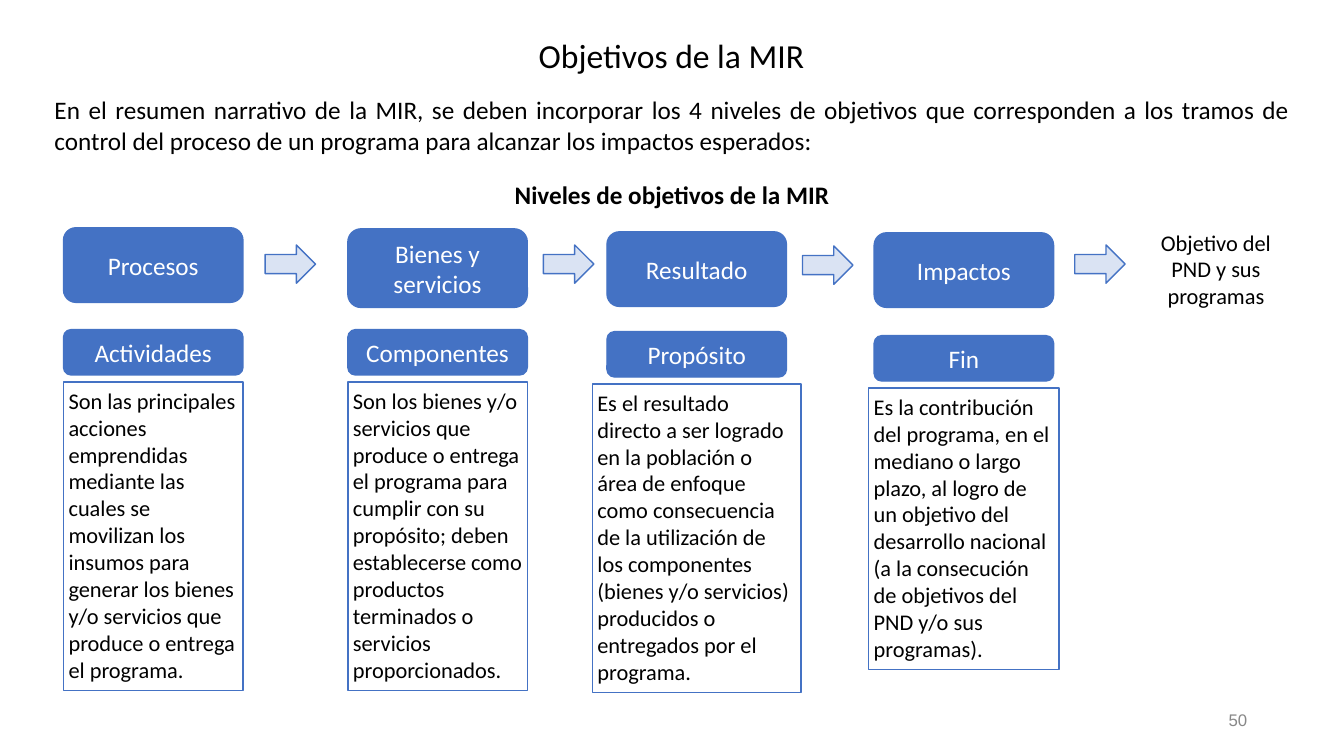
"""Build the slide on the four levels of objectives of the MIR."""
from dataclasses import dataclass

from pptx import Presentation
from pptx.dml.color import RGBColor
from pptx.enum import shapes, text
from pptx.util import Inches, Pt

BLUE = RGBColor(0x44, 0x72, 0xC4)
PALE_BLUE = RGBColor(0xDA, 0xE3, 0xF3)
GREY = RGBColor(0x88, 0x88, 0x88)
BLACK = RGBColor(0, 0, 0)
WHITE = RGBColor(255, 255, 255)
Align = text.PP_ALIGN
Anchor = text.MSO_ANCHOR
Preset = shapes.MSO_SHAPE

CARD_WIDTH = 1.78
LEVEL_HEIGHT = 0.45


@dataclass
class Level:
    """One level of objectives: its stage, name, description and geometry."""
    stage: str
    name: str
    description: str
    left: float
    stage_top: float
    stage_height: float
    name_top: float
    description_width: float
    description_height: float
    arrow_left: float
    arrow_top: float = 2.43


LEVELS = [
    Level("Procesos", "Actividades",
          "Son las principales acciones emprendidas mediante las cuales se "
          "movilizan los insumos para generar los bienes y/o servicios que "
          "produce o entrega el programa.",
          0.63, 2.26, 0.74, 3.27, 1.78, 3.06, 2.63),
    Level("Bienes y servicios", "Componentes",
          "Son los bienes y/o servicios que produce o entrega el programa para "
          "cumplir con su propósito; deben establecerse como productos "
          "terminados o servicios proporcionados.",
          3.45, 2.27, 0.78, 3.27, 1.78, 3.06, 5.39),
    Level("Resultado", "Propósito",
          "Es el resultado directo a ser logrado en la población o área de "
          "enfoque como consecuencia de la utilización de los componentes "
          "(bienes y/o servicios) producidos o entregados por el programa.",
          6.02, 2.3, 0.74, 3.29, 2.07, 3.06, 7.96, 2.44),
    Level("Impactos", "Fin",
          "Es la contribución del programa, en el mediano o largo plazo, al "
          "logro de un objetivo del desarrollo nacional (a la consecución de "
          "objetivos del PND y/o sus programas).",
          8.67, 2.31, 0.74, 3.33, 1.89, 2.79, 10.66),
]


def write(box, words, size, color=BLACK, align=Align.LEFT, anchor=Anchor.TOP,
          inset=0.05, wrap=True, bold=False, font="Calibri"):
    """Put one formatted paragraph in a box."""
    frame = box.text_frame
    frame.word_wrap = wrap
    frame.vertical_anchor = anchor
    frame.margin_left = frame.margin_right = Inches(inset)
    frame.margin_top = frame.margin_bottom = Inches(0.05)
    para = frame.paragraphs[0]
    para.text = words
    para.alignment = align
    para.font.name = font
    para.font.size = Pt(size)
    para.font.bold = bold
    para.font.color.rgb = color


def add_text(page, place, words, size, **style):
    """Add a plain text box."""
    box = page.shapes.add_textbox(*map(Inches, place))
    write(box, words, size, **style)


def add_figure(page, preset, place, fill=None):
    """Add a preset shape with a blue outline and an optional fill."""
    figure = page.shapes.add_shape(preset, *map(Inches, place))
    figure.shadow.inherit = False
    if fill is None:
        figure.fill.background()
    else:
        figure.fill.solid()
        figure.fill.fore_color.rgb = fill
    figure.line.color.rgb = BLUE
    figure.line.width = Pt(1)
    return figure


def add_card(page, place, words):
    """Add a rounded blue card with a centred label."""
    card = add_figure(page, Preset.ROUNDED_RECTANGLE, place, BLUE)
    write(card, words, 18, WHITE, Align.CENTER, Anchor.MIDDLE)


def add_level(page, level):
    """Add the cards, description and arrow of one level."""
    add_card(page, (level.left, level.stage_top, CARD_WIDTH, level.stage_height),
             level.stage)
    add_card(page, (level.left, level.name_top, CARD_WIDTH, LEVEL_HEIGHT),
             level.name)
    left = level.left - (level.description_width - CARD_WIDTH) / 2
    description = add_figure(
        page, Preset.RECTANGLE,
        (left, level.name_top + 0.52, level.description_width,
         level.description_height))
    write(description, level.description, 16)
    add_figure(page, Preset.RIGHT_ARROW,
               (level.arrow_left, level.arrow_top, 0.5, 0.38), PALE_BLUE)


def main():
    """Build and save the deck."""
    deck = Presentation()
    deck.slide_width, deck.slide_height = Inches(13.33), Inches(7.5)
    page = deck.slides.add_slide(deck.slide_layouts[6])
    add_text(page, (5.23, 0.3, 2.86, 0.5), "Objetivos de la MIR", 24,
             align=Align.CENTER, inset=0.1, wrap=False)
    add_text(page, (0.49, 0.89, 12.35, 0.71),
             "En el resumen narrativo de la MIR, se deben incorporar los 4 "
             "niveles de objetivos que corresponden a los tramos de control del "
             "proceso de un programa para alcanzar los impactos esperados:",
             18, align=Align.JUSTIFY)
    add_text(page, (4.99, 1.73, 3.35, 0.4), "Niveles de objetivos de la MIR", 18,
             align=Align.CENTER, inset=0.1, wrap=False, bold=True)
    for level in LEVELS:
        add_level(page, level)
    add_text(page, (11.34, 2.22, 1.44, 0.91), "Objetivo del PND y sus programas",
             16, align=Align.CENTER, inset=0.1)
    add_text(page, (12.13, 7, 0.29, 0.29), "50", 12, color=GREY,
             align=Align.RIGHT, anchor=Anchor.MIDDLE, wrap=False, font="Arial")
    deck.save("out.pptx")


if __name__ == "__main__":
    main()
